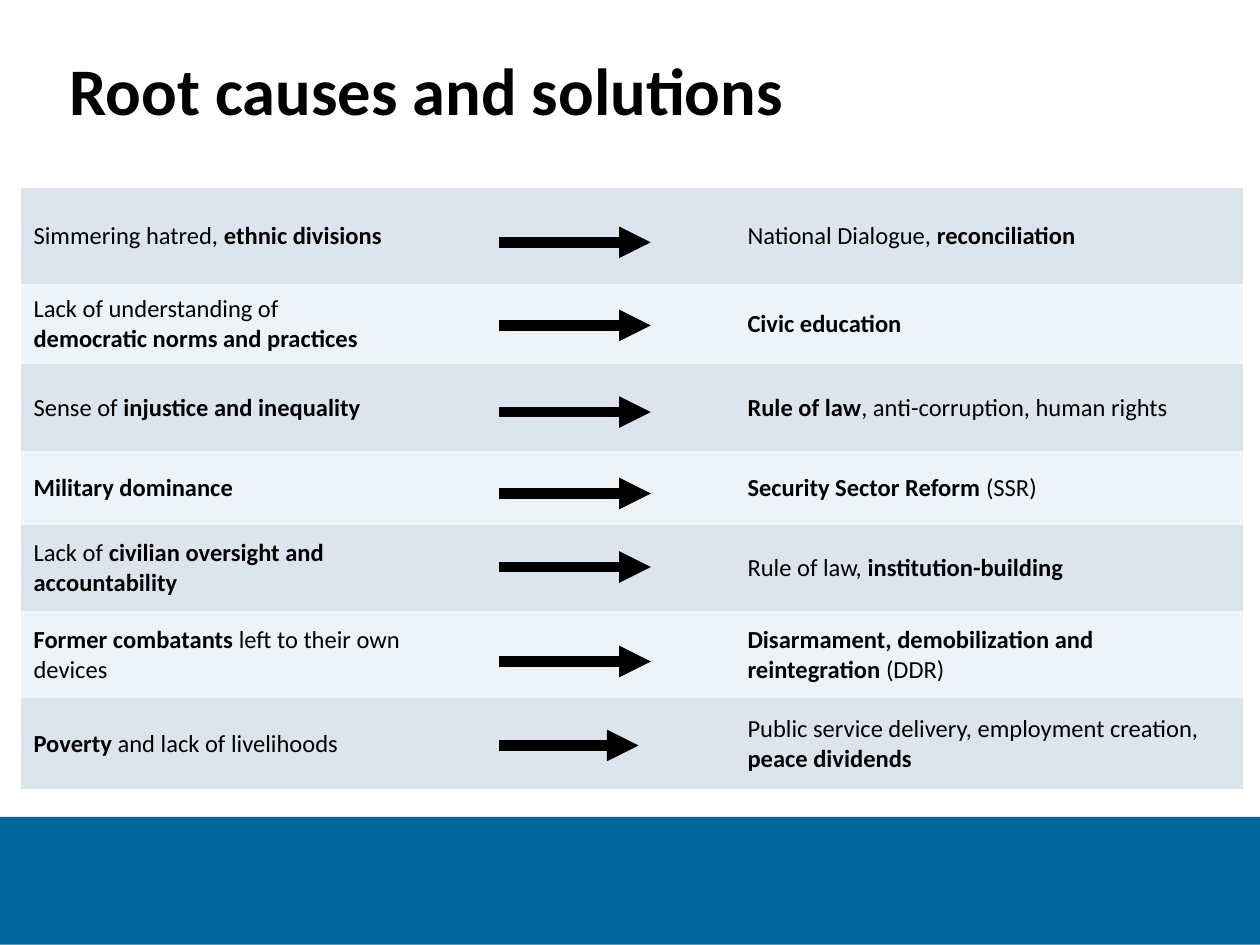
from dataclasses import dataclass

from lxml.etree import SubElement
from pptx import Presentation
from pptx.dml.color import RGBColor
from pptx.enum.shapes import MSO_CONNECTOR, MSO_SHAPE
from pptx.enum.text import MSO_ANCHOR
from pptx.oxml.ns import qn
from pptx.util import Pt


@dataclass(frozen=True)
class Theme:
    font: str = "Calibri"
    ink: RGBColor = RGBColor(0, 0, 0)
    blue: RGBColor = RGBColor(0x00, 0x66, 0x99)
    dark: RGBColor = RGBColor(0xDC, 0xE5, 0xEE)
    light: RGBColor = RGBColor(0xEE, 0xF3, 0xF7)
    head: float = 38
    body: float = 14
    line: float = 6


THEME = Theme()
PLAIN = "{2D5ABB26-0587-4C30-8999-92F81FD0307C}"  # table style without grid

# Cause, solution, row height; an asterisk switches bold on or off
ROWS = [
    ("Simmering hatred, *ethnic divisions",
     "National Dialogue, *reconciliation", 55),
    ("Lack of understanding of \n*democratic norms and practices",
     "*Civic education", 45.7),
    ("Sense of *injustice and inequality",
     "*Rule of law*, anti-corruption, human rights", 49.8),
    ("*Military dominance",
     "*Security Sector Reform *(SSR)", 41.8),
    ("Lack of *civilian oversight and accountability",
     "Rule of law, *institution-building", 49.7),
    ("*Former combatants *left to their own devices",
     "*Disarmament, demobilization and reintegration *(DDR)", 49.7),
    ("*Poverty* and lack of livelihoods",
     "Public service delivery, employment creation, *peace dividends", 51.9),
]
COLS = (240, 168, 290.4)
TOP = 47.5  # height of the empty first row

# Arrow height and length, measured from the table's corner
ARROWS = [(78.5, 87), (126, 87), (175.5, 87), (222, 87),
          (264, 87), (318, 87), (366, 80)]


def assign(thing, values):
    for name, value in values.items():
        setattr(thing, name, value)


def write(para, text, size):
    """Write text as runs, with bold switched at each asterisk."""
    for i, part in enumerate(text.split("*")):
        for j, line in enumerate(part.split("\n")):
            if j:
                para.add_line_break()
            if line:
                run = para.add_run()
                run.text = line
                assign(run.font, {"name": THEME.font, "size": Pt(size),
                                  "bold": i % 2 == 1})
                run.font.color.rgb = THEME.ink


def add_band(slide, x, y, w, h):
    band = slide.shapes.add_shape(MSO_SHAPE.RECTANGLE, Pt(x), Pt(y), Pt(w), Pt(h))
    band.shadow.inherit = False
    band.fill.solid()
    band.fill.fore_color.rgb = THEME.blue
    band.line.fill.background()


def add_title(slide, x, y, w, h):
    frame = slide.shapes.add_textbox(Pt(x), Pt(y), Pt(w), Pt(h)).text_frame
    sides = ("left", "right", "top", "bottom")
    assign(frame, {"word_wrap": True, "vertical_anchor": MSO_ANCHOR.MIDDLE,
                   **{f"margin_{side}": Pt(3.6) for side in sides}})
    write(frame.paragraphs[0], "*Root causes and solutions", THEME.head)


def add_grid(slide, x, y, w, h):
    shape = slide.shapes.add_table(len(ROWS) + 1, len(COLS),
                                   Pt(x), Pt(y), Pt(w), Pt(h))
    grid = shape.table
    assign(grid, {"first_row": False, "horz_banding": False})
    shape._element.find(".//" + qn("a:tableStyleId")).text = PLAIN
    for col, width in zip(grid.columns, COLS):
        col.width = Pt(width)

    # Empty first row
    grid.rows[0].height = Pt(TOP)
    for cell in grid.rows[0].cells:
        cell.fill.background()

    # Striped rows
    for i, (cause, cure, height) in enumerate(ROWS):
        row = grid.rows[i + 1]
        row.height = Pt(height)
        for cell, text in zip(row.cells, (cause, "", cure)):
            cell.fill.solid()
            cell.fill.fore_color.rgb = THEME.light if i % 2 else THEME.dark
            cell.vertical_anchor = MSO_ANCHOR.MIDDLE
            write(cell.text_frame.paragraphs[0], text, THEME.body)


def add_arrows(slide, x, y):
    left = x + 272.9
    for drop, length in ARROWS:
        arrow = slide.shapes.add_connector(
            MSO_CONNECTOR.STRAIGHT, Pt(left), Pt(y + drop),
            Pt(left + length), Pt(y + drop))
        arrow.line.width = Pt(THEME.line)
        arrow.line.color.rgb = THEME.ink
        SubElement(arrow.line._get_or_add_ln(), qn("a:tailEnd"), type="triangle")
        SubElement(arrow._element.spPr, qn("a:effectLst"))


def main():
    deck = Presentation()
    assign(deck, {"slide_width": Pt(720), "slide_height": Pt(540)})
    slide = deck.slides.add_slide(deck.slide_layouts[6])
    add_band(slide, 0, 466.8, 720, 73)
    add_title(slide, 36, 18, 675, 66)
    add_grid(slide, 12, 60, sum(COLS), TOP + sum(row[2] for row in ROWS))
    add_arrows(slide, 12, 60)
    deck.save("out.pptx")


if __name__ == "__main__":
    main()
